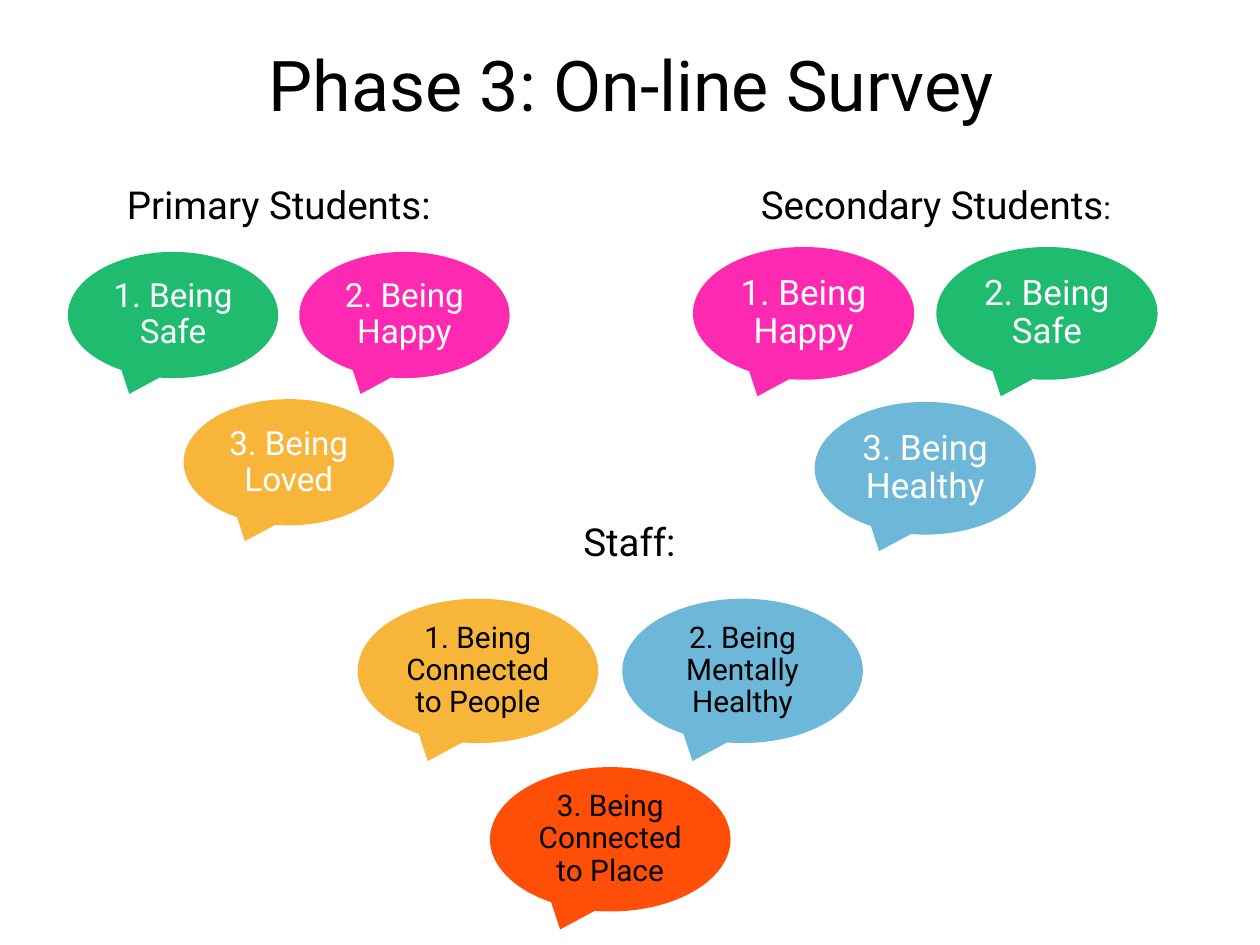
from pptx import Presentation
from pptx.dml.color import RGBColor
from pptx.enum.shapes import MSO_SHAPE
from pptx.enum.text import MSO_ANCHOR, PP_ALIGN
from pptx.util import Cm, Pt

COLORS = {"black": "000000", "white": "FFFFFF", "green": "1FBB6F", "pink": "FD29B1",
          "amber": "F7B53A", "blue": "6DB7D9", "orange": "FF4E08"}
FONT = "Roboto"

# Content: text runs are (text, size in points), lengths are in cm
TITLE = {"box": (1.3, 0.1, 22.86, 3.18), "runs": [("Phase 3: On-line Survey", 40)]}
GROUPS = [
    {"box": (2.31, 3.53, 7.8, 1.19), "runs": [("Primary Students:", 22)], "wrap": True,
     "start": (1.37, 5.08), "width": 4.24, "size": 19, "color": "white", "inset": 0.2,
     "answers": [("1. Being Safe", "green"), ("2. Being Happy", "pink"),
                 ("3. Being Loved", "amber")]},
    {"box": (15.09, 3.53, 7.98, 1.19), "runs": [("Secondary Students", 22), (":", 18)],
     "wrap": False,
     "start": (13.97, 4.98), "width": 4.46, "size": 20, "color": "white", "inset": 0.2,
     "answers": [("1. Being Happy", "pink"), ("2. Being Safe", "green"),
                 ("3. Being Healthy", "blue")]},
    {"box": (11.51, 10.31, 5.21, 1.19), "runs": [("Staff:", 22)], "wrap": True,
     "start": (7.21, 12.07), "width": 4.85, "size": 17, "color": "black", "inset": 0.18,
     "answers": [("1. Being Connected to People", "amber"),
                 ("2. Being Mentally Healthy", "blue"),
                 ("3. Being Connected to Place", "orange")]},
]

# Bubble proportions, as shares of the bubble width
HEIGHT, COLUMN_STEP, ROW_STEP = 0.6, 1.1, 0.7
PLACES = [(0, 0), (1, 0), (0.5, 1)]  # two above, one centred below


def rgb(name):
    return RGBColor.from_string(COLORS[name])


def apply(obj, values):
    for name, value in values.items():
        setattr(obj, name, value)


def write(tf, runs, color, frame, paragraph):
    apply(tf, frame)
    p = tf.paragraphs[0]
    apply(p, paragraph)
    for text, size in runs:
        r = p.add_run()
        r.text = text
        apply(r.font, {"name": FONT, "size": Pt(size)})
        r.font.color.rgb = rgb(color)


def add_text(shapes, box, runs, frame, align):
    sp = shapes.add_textbox(*map(Cm, box))
    write(sp.text_frame, runs, "black", frame, {"alignment": align})


def add_bubbles(shapes, group):
    left, top = group["start"]
    width = group["width"]
    sides = ("margin_left", "margin_top", "margin_right", "margin_bottom")
    frame = {"word_wrap": True, "vertical_anchor": MSO_ANCHOR.MIDDLE,
             **dict.fromkeys(sides, Cm(group["inset"]))}
    paragraph = {"alignment": PP_ALIGN.CENTER, "line_spacing": 0.9}
    for (text, fill), (column, row) in zip(group["answers"], PLACES):
        sp = shapes.add_shape(MSO_SHAPE.OVAL_CALLOUT,
                              Cm(left + column * COLUMN_STEP * width),
                              Cm(top + row * ROW_STEP * width),
                              Cm(width), Cm(HEIGHT * width))
        sp.shadow.inherit = False
        sp.fill.solid()
        sp.fill.fore_color.rgb = rgb(fill)
        sp.line.fill.background()
        write(sp.text_frame, [(text, group["size"])], group["color"], frame, paragraph)


prs = Presentation()
apply(prs, {"slide_width": Cm(25.4), "slide_height": Cm(19.05)})
s = prs.slides.add_slide(prs.slide_layouts[6])

# Title
add_text(s.shapes, TITLE["box"], TITLE["runs"],
         {"word_wrap": True, "vertical_anchor": MSO_ANCHOR.MIDDLE}, PP_ALIGN.CENTER)

# Answer bubbles, with a heading for each group of people
for group in GROUPS:
    add_bubbles(s.shapes.add_group_shape().shapes, group)
    add_text(s.shapes, group["box"], group["runs"],
             {"word_wrap": group["wrap"]}, PP_ALIGN.LEFT)

prs.save("out.pptx")
